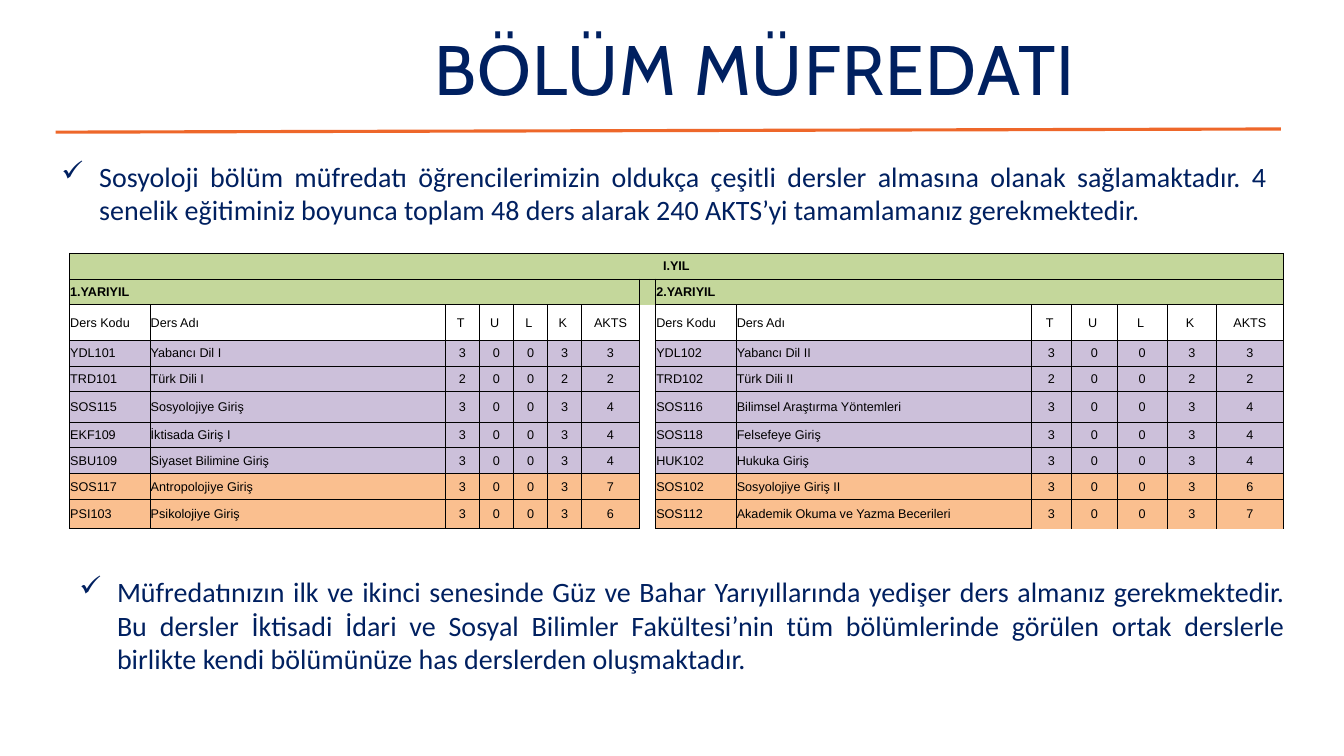
from pptx import Presentation
from pptx.dml.color import RGBColor
from pptx.enum.shapes import MSO_CONNECTOR
from pptx.enum.text import MSO_ANCHOR, PP_ALIGN
from pptx.oxml.xmlchemy import OxmlElement
from pptx.util import Cm, Pt

STRAIGHT = MSO_CONNECTOR.STRAIGHT
MIDDLE, TOP = MSO_ANCHOR.MIDDLE, MSO_ANCHOR.TOP
LEFT, CENTER, JUSTIFY = PP_ALIGN.LEFT, PP_ALIGN.CENTER, PP_ALIGN.JUSTIFY

NAVY = RGBColor(0x00, 0x20, 0x60)
ORANGE = RGBColor(0xEE, 0x67, 0x2A)
BLACK = RGBColor(0x00, 0x00, 0x00)
WHITE = RGBColor(0xFF, 0xFF, 0xFF)
GREEN = RGBColor(0xC4, 0xD7, 0x9B)
LILAC = RGBColor(0xCC, 0xC0, 0xDA)
PEACH = RGBColor(0xFA, 0xBF, 0x8F)

TITLE_FONT = {"name": "Cabin", "size": Pt(50)}
BODY_FONT = {"name": "Calibri", "size": Pt(20)}
CELL_FONT = {"name": "Arial", "size": Pt(9)}
CELL_FORM = {
    "margin_left": Cm(0.02),
    "margin_right": Cm(0.02),
    "margin_top": Cm(0.02),
    "margin_bottom": Cm(0),
    "vertical_anchor": MIDDLE,
}

INTRO = (
    "Sosyoloji bölüm müfredatı öğrencilerimizin oldukça çeşitli dersler "
    "almasına olanak sağlamaktadır. 4 senelik eğitiminiz boyunca toplam "
    "48 ders alarak 240 AKTS’yi tamamlamanız gerekmektedir."
)
OUTRO = (
    "Müfredatınızın ilk ve ikinci senesinde Güz ve Bahar Yarıyıllarında "
    "yedişer ders almanız gerekmektedir. Bu dersler İktisadi İdari ve Sosyal "
    "Bilimler Fakültesi’nin tüm bölümlerinde görülen ortak derslerle "
    "birlikte kendi bölümünüze has derslerden oluşmaktadır."
)

HEADS = ["Ders Kodu", "Ders Adı", "T ", "U ", "L ", "K ", "AKTS"]
FALL = [
    ("YDL101", "Yabancı Dil I", 3, 3),
    ("TRD101", "Türk Dili I", 2, 2),
    ("SOS115", "Sosyolojiye Giriş", 3, 4),
    ("EKF109", "İktisada Giriş I", 3, 4),
    ("SBU109", "Siyaset Bilimine Giriş", 3, 4),
    ("SOS117", "Antropolojiye Giriş", 3, 7),
    ("PSI103", "Psikolojiye Giriş", 3, 6),
]
SPRING = [
    ("YDL102", "Yabancı Dil II", 3, 3),
    ("TRD102", "Türk Dili II", 2, 2),
    ("SOS116", "Bilimsel Araştırma Yöntemleri", 3, 4),
    ("SOS118", "Felsefeye Giriş", 3, 4),
    ("HUK102", "Hukuka Giriş", 3, 4),
    ("SOS102", "Sosyolojiye Giriş II", 3, 6),
    ("SOS112", "Akademik Okuma ve Yazma Becerileri", 3, 7),
]
GAP = len(HEADS)
WIDTHS = [2.03, 7.44] + [0.86] * 4 + [1.45, 0.41]
WIDTHS += [2.03, 7.44, 1.02, 1.14, 1.27, 1.24, 1.68]
HEIGHTS = [0.65, 0.65, 0.89, 0.65, 0.65, 0.76, 0.65, 0.65, 0.65, 0.74]
FILLS = [GREEN, GREEN, WHITE] + [LILAC] * 5 + [PEACH] * 2


def apply(target, form):
    """Set each attribute in form on target."""
    for name, value in form.items():
        setattr(target, name, value)


def add_text(slide, text, place, font, anchor=TOP):
    """Add a wrapped navy text box and return its paragraph."""
    frame = slide.shapes.add_textbox(*map(Cm, place)).text_frame
    apply(frame, {"word_wrap": True, "vertical_anchor": anchor})
    para = frame.paragraphs[0]
    run = para.add_run()
    run.text = text
    apply(run.font, font)
    run.font.color.rgb = NAVY
    return para


def add_title(slide):
    """Add the slide title with slightly open letters."""
    para = add_text(slide, "BÖLÜM MÜFREDATI", (10.69, -0.13, 21.59, 4.06),
                    TITLE_FONT, MIDDLE)
    para.line_spacing = 0.8
    para.runs[0].font._element.set("spc", "100")


def add_check(slide, text, place):
    """Add a justified paragraph with a check mark."""
    para = add_text(slide, text, place, BODY_FONT)
    para.alignment = JUSTIFY
    props = para._p.get_or_add_pPr()
    props.set("marL", str(Cm(0.95)))
    props.set("indent", str(-Cm(0.95)))
    mark = OxmlElement("a:buChar")
    mark.set("char", "✓")
    props.append(mark)


def add_rule(slide, start, end):
    """Add the orange line below the title."""
    rule = slide.shapes.add_connector(STRAIGHT, *map(Cm, start + end))
    rule.line.color.rgb = ORANGE
    rule.line.width = Pt(2.25)
    rule._element.spPr.append(OxmlElement("a:effectLst"))


def set_edges(cell, sides):
    """Draw thin black edges on the given sides and clear the rest."""
    props = cell._tc.get_or_add_tcPr()
    for side in "LRTB":
        edge = OxmlElement(f"a:ln{side}")
        edge.set("w", str(Pt(0.5)))
        if side in sides:
            fill = OxmlElement("a:solidFill")
            color = OxmlElement("a:srgbClr")
            color.set("val", str(BLACK))
            fill.append(color)
        else:
            fill = OxmlElement("a:noFill")
        edge.append(fill)
        props.append(edge)


def set_cell(cell, text, fill, sides, align, bold):
    """Fill, frame and write one table cell."""
    apply(cell, CELL_FORM)
    set_edges(cell, sides)
    cell.fill.solid()
    cell.fill.fore_color.rgb = fill
    para = cell.text_frame.paragraphs[0]
    para.alignment = align
    if text:
        run = para.add_run()
        run.text = text
        apply(run.font, {**CELL_FONT, "bold": bold})
        run.font.color.rgb = BLACK
    else:
        end = OxmlElement("a:endParaRPr")
        end.set("sz", "900")
        para._p.append(end)


def get_rows():
    """Return the text of the table, row by row."""
    blank = [""] * (GAP - 1)
    rows = [["I.YIL"] + [""] * (2 * GAP),
            ["1.YARIYIL", *blank, "", "2.YARIYIL", *blank],
            [*HEADS, "", *HEADS]]
    for pair in zip(FALL, SPRING):
        left, right = [[code, name, str(hours), "0", "0", str(hours), str(akts)]
                       for code, name, hours, akts in pair]
        rows.append([*left, "", *right])
    return rows


def get_sides(row, col):
    """Return the sides of a cell that carry a line."""
    if col == GAP and row > 0:
        return "LRT" if row == 1 else "LR"
    if row == len(HEIGHTS) - 1 and col > GAP + 2:
        return "LRT"
    return "LRTB"


def add_plan(slide):
    """Add the table of first-year courses."""
    rows = get_rows()
    place = (1.75, 6.38, sum(WIDTHS), sum(HEIGHTS))
    table = slide.shapes.add_table(len(rows), len(WIDTHS), *map(Cm, place)).table
    apply(table, {"first_row": False, "horz_banding": False})
    for col, width in zip(table.columns, WIDTHS):
        col.width = Cm(width)
    for row, height in zip(table.rows, HEIGHTS):
        row.height = Cm(height)
    for row, texts in enumerate(rows):
        for col, text in enumerate(texts):
            fill = WHITE if col == GAP and row > 1 else FILLS[row]
            middle = row == 0 or row > 1 and col % (GAP + 1) > 1
            set_cell(table.cell(row, col), text, fill, get_sides(row, col),
                     CENTER if middle else LEFT, row < 2)
    for row, first, last in [(0, 0, 2 * GAP), (1, 0, GAP - 1), (1, GAP + 1, 2 * GAP)]:
        table.cell(row, first).merge(table.cell(row, last))


def main():
    """Build the curriculum slide."""
    deck = Presentation()
    apply(deck, {"slide_width": Cm(33.87), "slide_height": Cm(19.05)})
    slide = deck.slides.add_slide(deck.slide_layouts[6])
    add_title(slide)
    add_rule(slide, (1.4, 3.33), (32.28, 3.25))
    add_check(slide, INTRO, (1.3, 3.89, 30.89, 1.96))
    add_plan(slide)
    add_check(slide, OUTRO, (1.75, 14.35, 30.89, 2.82))
    deck.save("out.pptx")


if __name__ == "__main__":
    main()
